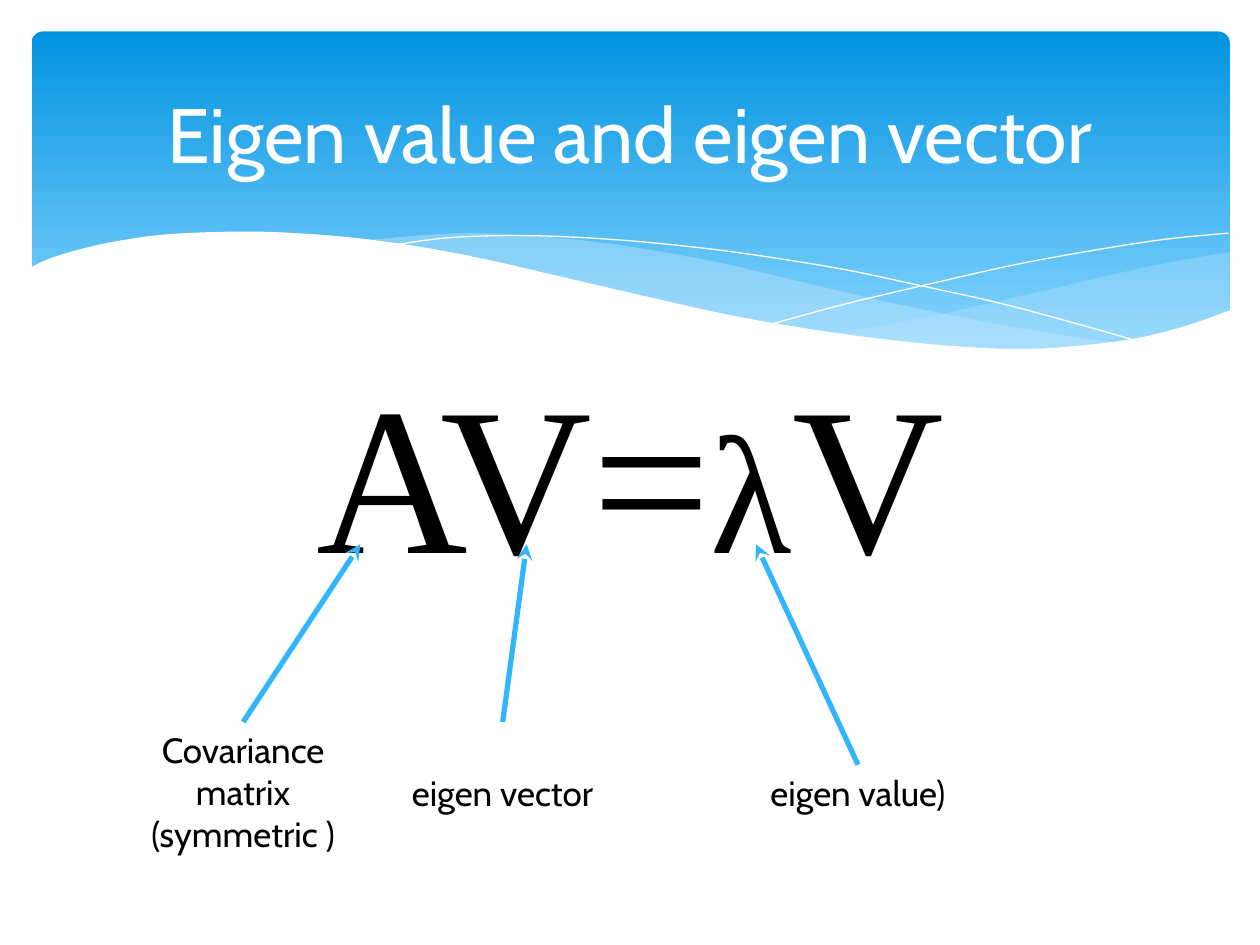
from lxml.etree import SubElement
from pptx import Presentation
from pptx.dml.color import RGBColor
from pptx.enum.shapes import MSO_CONNECTOR, MSO_SHAPE
from pptx.enum.text import MSO_ANCHOR, MSO_AUTO_SIZE, PP_ALIGN
from pptx.oxml.ns import qn
from pptx.util import Inches, Pt

COLORS = {
    "white": "FFFFFF",
    "black": "000000",
    "banner_top": "0293E0",
    "banner_bottom": "83D3FE",
    "wave": "C6E7FC",
    "arrow": "31B6FD",
}
STEPS = 6
LABEL_WIDTH = 1.86

RIGHT_WAVE_TOP = [(9.76, 2), (9.35, 2.07), (8.91, 2.16), (8.32, 2.3), (7.79, 2.42),
                  (7.29, 2.53), (6.61, 2.65)]
RIGHT_WAVE_BOTTOM = [(6.61, 2.65), (7.05, 2.71), (7.57, 2.76), (8.14, 2.78), (8.63, 2.75),
                     (9.05, 2.69), (9.42, 2.59), (9.76, 2.47)]
LONG_WAVE_TOP = [(8.93, 2.73), (8.37, 2.65), (7.75, 2.54), (7.06, 2.4), (6.29, 2.22),
                 (5.69, 2.08), (5.14, 1.98), (4.65, 1.91), (4.2, 1.87), (3.8, 1.85),
                 (3.44, 1.86), (2.86, 1.91)]
LONG_WAVE_BOTTOM = [(2.86, 1.91), (3.42, 1.99), (4.04, 2.11), (4.49, 2.22), (5.3, 2.4),
                    (6.01, 2.55), (6.65, 2.66), (7.22, 2.74), (7.73, 2.77), (8.28, 2.78),
                    (8.93, 2.73)]
FALLING_LINE = [(3.09, 1.95), (3.53, 1.89), (4.01, 1.87), (4.5, 1.88), (5.1, 1.92),
                (5.82, 2), (6.65, 2.13), (7.27, 2.26), (7.95, 2.41), (8.69, 2.61),
                (9.07, 2.72)]
RISING_LINE = [(6.13, 2.57), (6.72, 2.41), (7.48, 2.23), (8.06, 2.1), (8.66, 1.99),
               (9.24, 1.9), (9.75, 1.85)]
WHITE_WAVE = [(9.77, 2.46), (9.4, 2.59), (8.99, 2.69), (8.5, 2.75), (8.09, 2.77),
              (7.61, 2.75), (7.08, 2.7), (6.48, 2.62), (5.79, 2.5), (5.03, 2.33),
              (4.47, 2.2), (3.91, 2.07), (3.4, 1.97), (2.92, 1.9), (2.5, 1.86),
              (2.11, 1.84), (1.77, 1.84), (1.32, 1.86), (0.95, 1.91), (0.67, 1.97),
              (0.4, 2.05), (0.23, 2.13)]


def rgb(name):
    return RGBColor.from_string(COLORS[name])


def smooth_curve(knots):
    padded = [knots[0], *knots, knots[-1]]
    points = [knots[0]]
    for before, start, end, after in zip(padded, padded[1:], padded[2:], padded[3:]):
        for step in range(1, STEPS + 1):
            t = step / STEPS
            points.append(tuple(
                (2 * b + (c - a) * t + (2 * a - 5 * b + 4 * c - d) * t ** 2
                 + (3 * b - a - 3 * c + d) * t ** 3) / 2
                for a, b, c, d in zip(before, start, end, after)))
    return points


def add_freeform(slide, points, fill=None, opacity=100, line=None):
    corners = [(Inches(x), Inches(y)) for x, y in points]
    builder = slide.shapes.build_freeform(*corners[0])
    builder.add_line_segments(corners[1:], close=fill is not None)
    shape = builder.convert_to_shape()
    shape.shadow.inherit = False
    if fill:
        shape.fill.solid()
        shape.fill.fore_color.rgb = rgb(fill)
        color = shape.fill._xPr.find(qn("a:solidFill"))[0]
        SubElement(color, qn("a:alpha"), val=str(opacity * 1000))
    else:
        shape.fill.background()
    if line:
        shape.line.color.rgb = rgb(line)
        shape.line.width = Pt(0)
    else:
        shape.line.fill.background()


def add_banner(slide):
    banner = slide.shapes.add_shape(
        MSO_SHAPE.ROUNDED_RECTANGLE, Inches(0.25), Inches(0.25), Inches(9.51), Inches(2.7))
    banner.adjustments[0] = 0.034
    banner.shadow.inherit = False
    banner.line.fill.background()
    banner.fill.gradient()
    banner.fill.gradient_angle = 270
    stops = zip(banner.fill.gradient_stops, (0, 0.9), ("banner_top", "banner_bottom"))
    for stop, position, color in stops:
        stop.position = position
        stop.color.rgb = rgb(color)


def add_waves(slide):
    right_wave = smooth_curve(RIGHT_WAVE_TOP) + smooth_curve(RIGHT_WAVE_BOTTOM)
    long_wave = smooth_curve(LONG_WAVE_TOP) + smooth_curve(LONG_WAVE_BOTTOM)
    add_freeform(slide, right_wave, fill="wave", opacity=29)
    add_freeform(slide, long_wave, fill="wave", opacity=40)
    for knots in (FALLING_LINE, RISING_LINE):
        add_freeform(slide, smooth_curve(knots), line="white")
    white_wave = smooth_curve(WHITE_WAVE) + [(0.23, 3.29), (9.77, 3.29)]
    add_freeform(slide, white_wave, fill="white")


def write_text(paragraph, text, size=20, font="Cabin", color="black"):
    paragraph.alignment = PP_ALIGN.CENTER
    run = paragraph.add_run()
    run.text = text
    run.font.size = Pt(size)
    run.font.name = font
    run.font.color.rgb = rgb(color)


def place_title(slide, text):
    title = slide.shapes.title
    title.left, title.top = Inches(0.5), Inches(0.37)
    title.width, title.height = Inches(9), Inches(1.37)
    frame = title.text_frame
    frame.auto_size = MSO_AUTO_SIZE.NONE
    frame.vertical_anchor = MSO_ANCHOR.MIDDLE
    write_text(frame.paragraphs[0], text, size=44, color="white")
    slide.shapes._spTree.append(title._element)


def add_text_box(slide, left, top, width, height):
    box = slide.shapes.add_textbox(Inches(left), Inches(top), Inches(width), Inches(height))
    box.text_frame.word_wrap = True
    box.text_frame.auto_size = MSO_AUTO_SIZE.SHAPE_TO_FIT_TEXT
    return box


def add_equation(slide):
    paragraph = add_text_box(slide, 2.13, 2.68, 5.74, 2.12).text_frame.paragraphs[0]
    for text, size in (("AV=", 120), ("λ", 96), ("V", 120)):
        write_text(paragraph, text, size=size, font="Times New Roman")


def add_arrow(slide, start, end):
    arrow = slide.shapes.add_connector(
        MSO_CONNECTOR.STRAIGHT, *(Inches(value) for value in (*start, *end)))
    arrow.line.color.rgb = rgb("arrow")
    arrow.line.width = Pt(3)
    SubElement(arrow.line._get_or_add_ln(), qn("a:tailEnd"), type="stealth")
    SubElement(arrow._element.spPr, qn("a:effectLst"))
    return arrow


def add_label(slide, text, left, top, height, arrow_top, target_x):
    box = add_text_box(slide, left, top, LABEL_WIDTH, height)
    write_text(box.text_frame.paragraphs[0], text)
    arrow = add_arrow(slide, (left + LABEL_WIDTH / 2, arrow_top), (target_x, 4.32))
    if arrow_top == top:
        arrow.begin_connect(box, 0)


def main():
    presentation = Presentation()
    presentation.slide_width, presentation.slide_height = Inches(10), Inches(7.5)
    slide = presentation.slides.add_slide(presentation.slide_layouts[5])
    add_banner(slide)
    add_waves(slide)
    place_title(slide, "Eigen value and eigen vector")
    add_equation(slide)
    add_label(slide, "Covariance matrix (symmetric )", 1, 5.73, 1.11, 5.73, 2.86)
    add_label(slide, "eigen vector", 3.06, 6.07, 0.44, 5.73, 4.18)
    add_label(slide, "eigen value)", 5.88, 6.07, 0.44, 6.07, 6)
    presentation.save("out.pptx")


if __name__ == "__main__":
    main()
